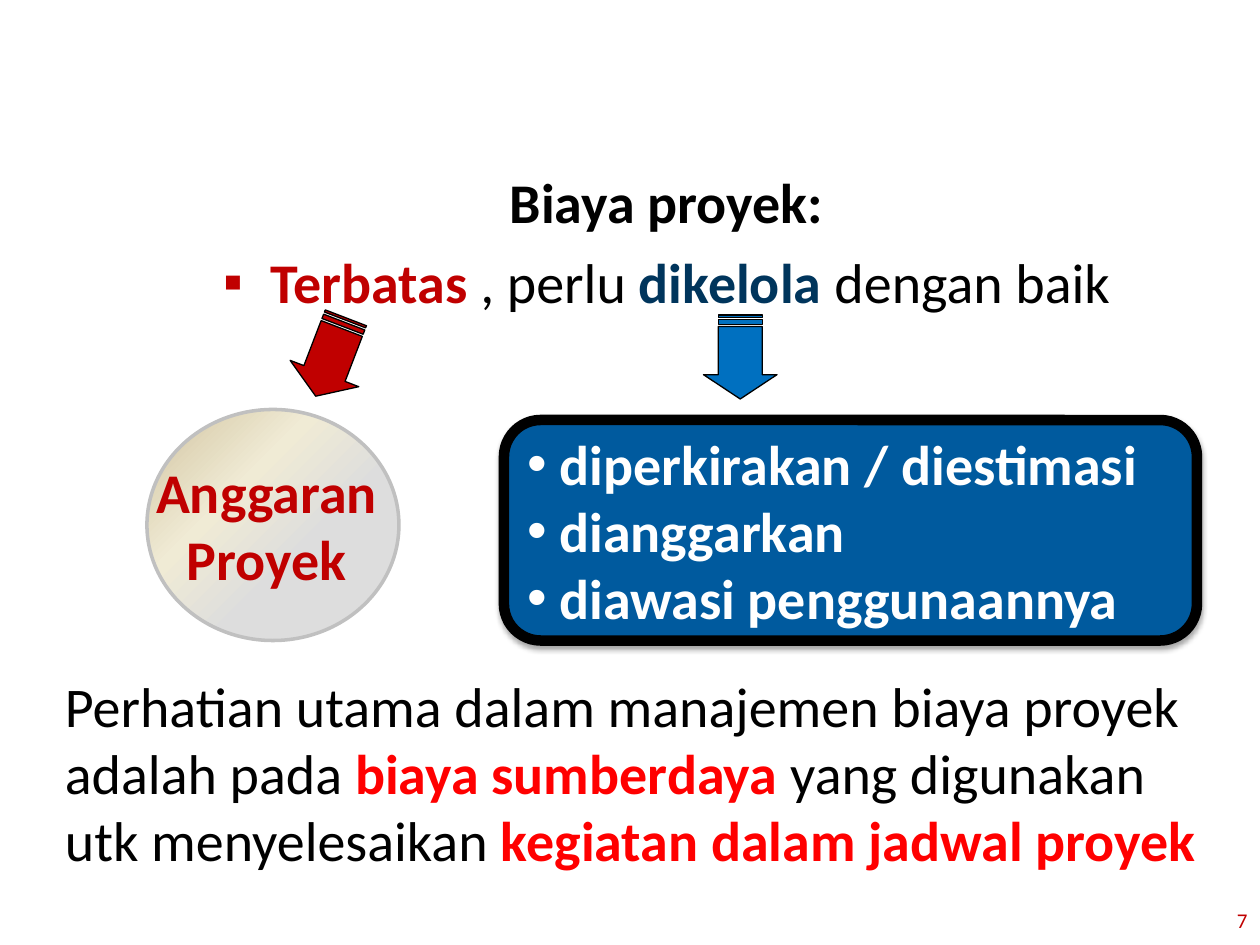
from dataclasses import dataclass
from typing import Optional

from lxml import etree
from pptx import Presentation
from pptx.dml.color import RGBColor
from pptx.enum.shapes import MSO_SHAPE
from pptx.enum.text import MSO_ANCHOR, PP_ALIGN
from pptx.oxml import parse_xml
from pptx.oxml.ns import qn
from pptx.util import Pt

ARROW = MSO_SHAPE.STRIPED_RIGHT_ARROW
ELLIPSE, ROUNDED = MSO_SHAPE.OVAL, MSO_SHAPE.ROUNDED_RECTANGLE
LEFT, CENTER, RIGHT = PP_ALIGN.LEFT, PP_ALIGN.CENTER, PP_ALIGN.RIGHT
MIDDLE, TOP = MSO_ANCHOR.MIDDLE, MSO_ANCHOR.TOP
NS = 'xmlns:a="http://schemas.openxmlformats.org/drawingml/2006/main"'
BLACK, WHITE, DARK_RED, RED, NAVY = "000000", "FFFFFF", "C00000", "FF0000", "00355C"


@dataclass
class Run:
    text: str
    color: str = BLACK
    bold: bool = False
    size: float = 32


@dataclass
class Para:
    runs: list[Run]
    align: PP_ALIGN = LEFT
    before: float = 0
    hanging: float = 0
    bullet: Optional[str] = None


@dataclass
class Arrow:
    left: float
    color: str
    angle: float


def rgb(value: str) -> RGBColor:
    return RGBColor.from_string(value)


def write(sp, paras: list[Para], anchor=TOP, wrap: bool = True) -> None:
    tf = sp.text_frame
    tf.word_wrap = wrap
    tf.vertical_anchor = anchor
    for i, para in enumerate(paras):
        p = tf.add_paragraph() if i else tf.paragraphs[0]
        p.alignment = para.align
        p.space_before = Pt(para.before)
        pPr = p._p.get_or_add_pPr()
        pPr.set("marL", str(Pt(para.hanging)))
        pPr.set("indent", str(-Pt(para.hanging)))
        if para.bullet:
            etree.SubElement(pPr, qn("a:buFont"), typeface="Arial")
            etree.SubElement(pPr, qn("a:buChar"), char=para.bullet)
        for run in para.runs:
            r = p.add_run()
            r.text = run.text
            r.font.name = "Calibri"
            r.font.size = Pt(run.size)
            r.font.bold = run.bold
            r.font.color.rgb = rgb(run.color)


def add_text(s, box: tuple, paras: list[Para], anchor=TOP) -> None:
    write(s.shapes.add_textbox(*map(Pt, box)), paras, anchor)


def add_shape(s, kind, box: tuple, fill: str, line: str, weight: float):
    sp = s.shapes.add_shape(kind, *map(Pt, box))
    sp.shadow.inherit = False
    sp.fill.solid()
    sp.fill.fore_color.rgb = rgb(fill)
    sp.line.color.rgb = rgb(line)
    sp.line.width = Pt(weight)
    return sp


def add_arrow(s, arrow: Arrow) -> None:
    sp = add_shape(s, ARROW, (arrow.left, 183, 48, 42), arrow.color, BLACK, 0.75)
    sp.rotation = arrow.angle
    sp.adjustments[0] = 0.6
    sp.adjustments[1] = 0.33


def set_radial_fill(sp, stops: list[tuple[int, str]]) -> None:
    """Fill with rings centred on the lower right corner."""
    gs = "".join(f'<a:gs pos="{pos * 1000}"><a:srgbClr val="{color}"/></a:gs>'
                 for pos, color in stops)
    grad = parse_xml(f'<a:gradFill {NS} rotWithShape="1"><a:gsLst>{gs}</a:gsLst>'
                     '<a:path path="circle"><a:fillToRect l="100000" t="100000"/>'
                     '</a:path></a:gradFill>')
    spPr = sp._element.spPr
    spPr.replace(spPr.find(qn("a:solidFill")), grad)


def set_shadow(sp, color: str, alpha: int, blur: float, dist: float) -> None:
    """Cast a soft shadow straight down."""
    effects = sp._element.spPr.find(qn("a:effectLst"))
    effects.append(parse_xml(
        f'<a:outerShdw {NS} blurRad="{Pt(blur)}" dist="{Pt(dist)}" dir="5400000" '
        f'rotWithShape="0"><a:srgbClr val="{color}"><a:alpha val="{alpha * 1000}"/>'
        '</a:srgbClr></a:outerShdw>'))


def main() -> None:
    prs = Presentation()
    prs.slide_width, prs.slide_height = Pt(720), Pt(540)
    s = prs.slides.add_slide(prs.slide_layouts[6])

    add_text(s, (42, 92, 678, 76), [
        Para([Run("Biaya proyek:", bold=True)], CENTER, 7.5, 27),
        Para([Run("Terbatas ", DARK_RED, True), Run(", perlu "),
              Run("dikelola ", NAVY, True), Run("dengan baik")],
             CENTER, 7.5, 27, "▪"),
    ])
    add_text(s, (552, 511, 168, 29), [Para([Run("7", DARK_RED, size=12)], RIGHT)], MIDDLE)

    budget = add_shape(s, ELLIPSE, (84, 234, 144, 132), "DDDDDD", "C0C0C0", 2)
    set_radial_fill(budget, [(38, "DDDDDD"), (65, "F0EBD5"), (100, "D1C39F")])
    write(budget, [Para([Run(text, DARK_RED, True)], CENTER)
                   for text in ("Anggaran ", "Proyek ")], MIDDLE, wrap=False)

    add_text(s, (30, 380, 666, 124), [Para([
        Run("Perhatian utama dalam manajemen biaya proyek adalah pada "),
        Run("biaya sumberdaya", RED, True),
        Run(" yang digunakan utk menyelesaikan "),
        Run("kegiatan dalam jadwal proyek", RED, True),
    ], before=7.5)])

    for arrow in (Arrow(399, "0070C0", 90), Arrow(165, DARK_RED, 111)):
        add_arrow(s, arrow)

    control = add_shape(s, ROUNDED, (288, 240, 396, 126), "005A9E", BLACK, 6)
    set_shadow(control, BLACK, 35, 3.1, 1.8)
    write(control, [Para([Run(text, WHITE, True)], bullet="•")
                    for text in (" diperkirakan / diestimasi", " dianggarkan",
                                 " diawasi penggunaannya")], MIDDLE)

    prs.save("out.pptx")


if __name__ == "__main__":
    main()
